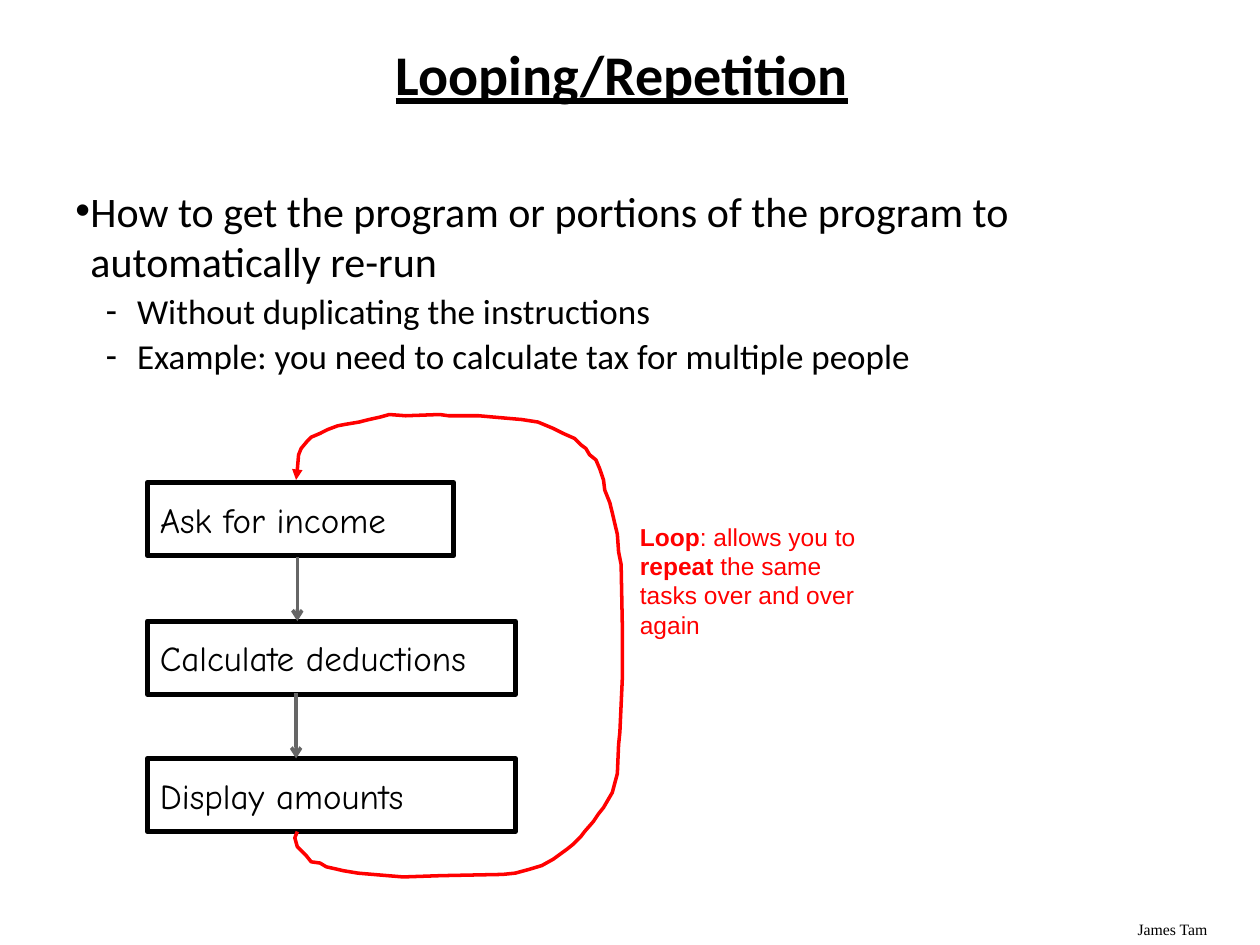
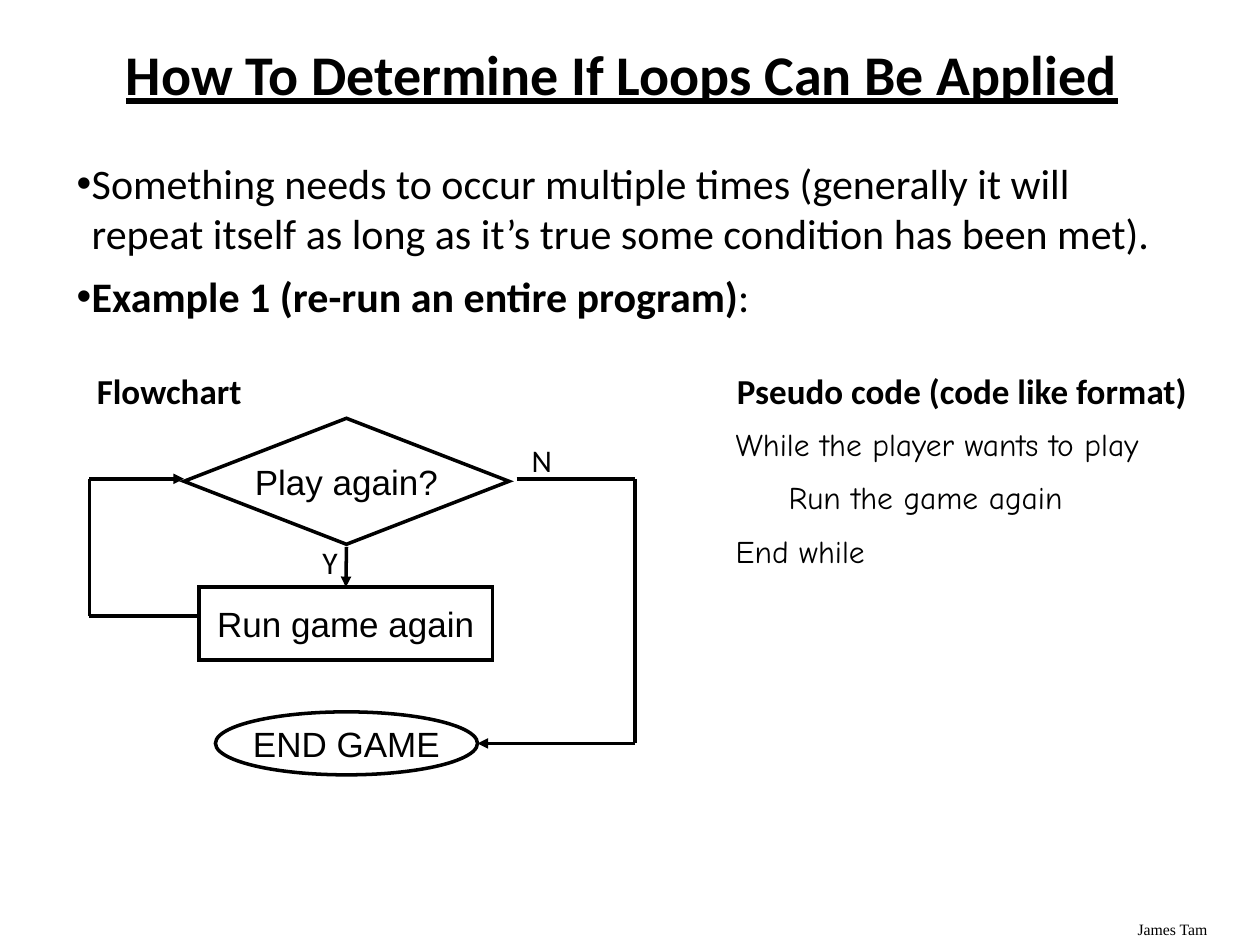
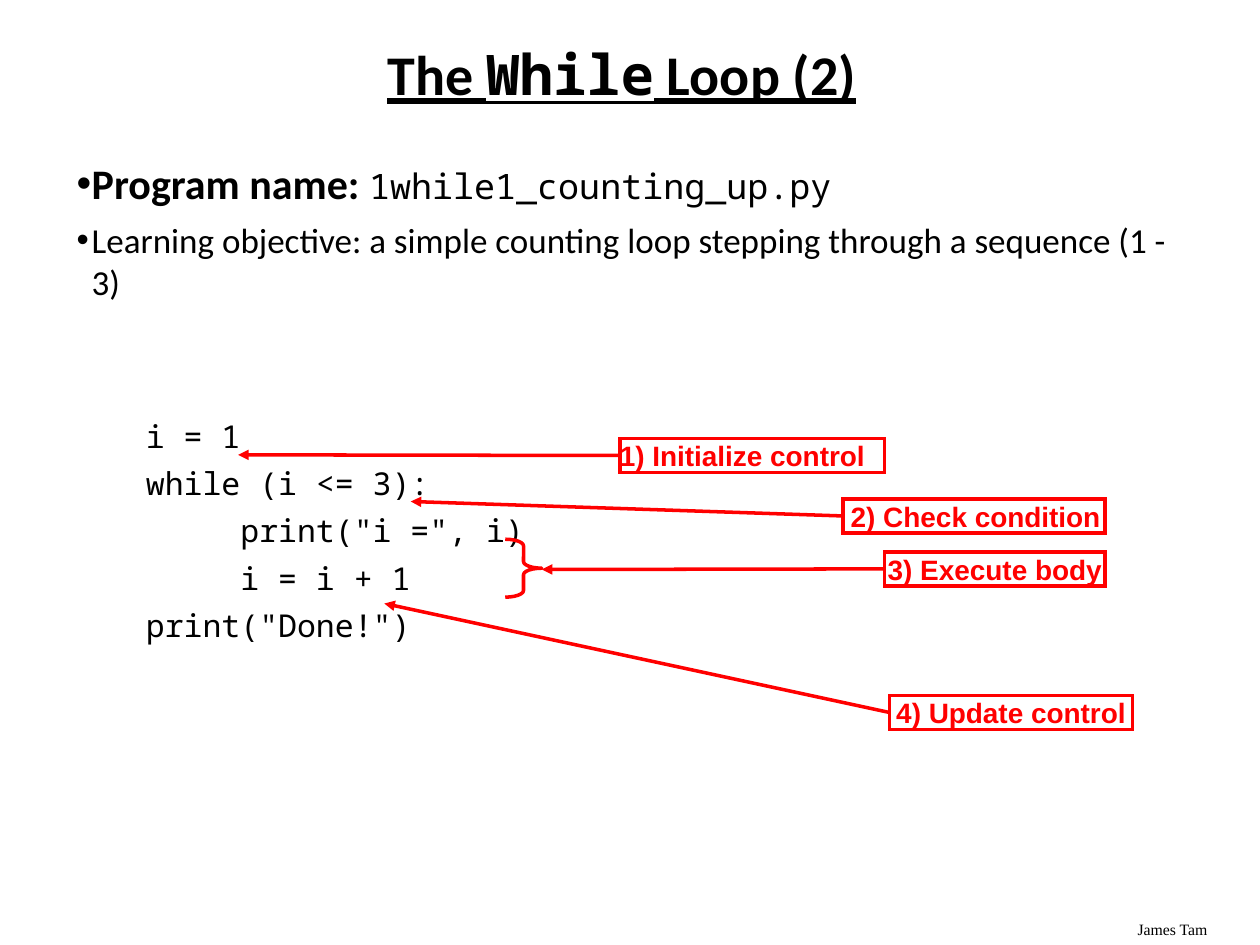
from lxml import etree
from pptx import Presentation
from pptx.dml.color import RGBColor
from pptx.enum.shapes import MSO_CONNECTOR, MSO_SHAPE
from pptx.enum.text import MSO_ANCHOR, PP_ALIGN
from pptx.oxml.ns import qn
from pptx.util import Inches, Pt

COLORS = {"black": "000000", "gray": "666666", "red": "FF0000"}
BODY, HAND, MONO, SANS = "Calibri", "Comic Neue", "Noto Sans Mono", "Arial"
CENTER = PP_ALIGN.CENTER
STRAIGHT = MSO_CONNECTOR.STRAIGHT


def write(sp, paragraphs, font, size, color="black", align=PP_ALIGN.LEFT,
          before=0, bold=False, underline=False, spacing=None):
    """Fill a shape; a paragraph is (runs, options), a run is (text, overrides)."""
    tf = sp.text_frame
    tf.word_wrap = True
    for i, (runs, options) in enumerate(paragraphs):
        p = tf.add_paragraph() if i else tf.paragraphs[0]
        p.alignment = align
        p.line_spacing = spacing
        p.space_before = Pt(options.get("before", before))
        pPr = p._p.get_or_add_pPr()
        pPr.set("marL", str(Inches(options.get("left", 0))))
        pPr.set("indent", str(Inches(-options.get("hang", 0))))
        if "bullet" in options:
            etree.SubElement(pPr, qn("a:buFont")).set("typeface", SANS)
            etree.SubElement(pPr, qn("a:buChar")).set("char", options["bullet"])
        for text, own in runs:
            r = p.add_run()
            r.text = text
            r.font.name = own.get("font", font)
            r.font.size = Pt(own.get("size", options.get("size", size)))
            r.font.bold = own.get("bold", bold)
            r.font.underline = underline
            r.font.color.rgb = RGBColor.from_string(COLORS[color])


def outline(sp, color="black", width=2, head=None, sharp=False):
    """Give a shape or connector a plain line, no shadow, and maybe an arrowhead."""
    if hasattr(sp, "fill"):
        sp.fill.background()
    sp.line.color.rgb = RGBColor.from_string(COLORS[color])
    sp.line.width = Pt(width)
    spPr = sp._element.spPr
    ln = spPr.find(qn("a:ln"))
    if sharp:
        etree.SubElement(ln, qn("a:miter")).set("lim", "800000")
    if head:
        etree.SubElement(ln, qn("a:tailEnd")).set("type", head)
    etree.SubElement(spPr, qn("a:effectLst"))


prs = Presentation()
prs.slide_width, prs.slide_height = Inches(10), Inches(7.5)

# Title, body and footer of every slide
B = {"bold": True}
BULLET = {"bullet": "•", "left": 0.12, "hang": 0.12, "before": 7.2}
SMALL_BULLET = dict(BULLET, before=6, size=20)
DASH = {"bullet": "-", "left": 0.49, "hang": 0.25, "before": 2, "size": 20}
pages = [
    ([("Looping/Repetition", {})], (0.5, 1.42, 9, 4.83), [
        ([("How to get the program or portions of the program to "
           "automatically re-run", {})], BULLET),
        ([("Without duplicating the instructions", {})], DASH),
        ([("Example: you need to calculate tax for multiple people", {})], DASH)]),
    ([("How To Determine If Loops Can Be Applied", {})], (0.51, 1.2, 8.94, 5.87), [
        ([("Something needs to occur multiple times (generally it will repeat "
           "itself as long as it’s true some condition has been met).", {})], BULLET),
        ([("Example 1 (re-run an entire program)", B), (":", {})], BULLET)]),
    ([("The ", {}), ("While", {"font": MONO}), (" Loop (2)", {})],
     (0.51, 1.2, 8.94, 5.87), [
        ([("Program name: ", B),
          ("1while1_counting_up.py", {"font": MONO, "size": 20})], BULLET),
        ([("Learning objective: a simple counting loop stepping through a "
           "sequence (1 - 3)", {})], SMALL_BULLET)]),
]
for title, body_box, body in pages:
    s = prs.slides.add_slide(prs.slide_layouts[6])
    sp = s.shapes.add_textbox(*map(Inches, (8.93, 7.25, 1, 0.25)))
    write(sp, [([("James Tam", {})], {})], "Times New Roman", 9)
    sp = s.shapes.add_textbox(*map(Inches, (0.47, 0.33, 8.93, 0.57)))
    sp.text_frame.vertical_anchor = MSO_ANCHOR.MIDDLE
    write(sp, [(title, {})], BODY, 32, align=CENTER, bold=True, underline=True,
          spacing=0.9)
    sp = s.shapes.add_textbox(*map(Inches, body_box))
    write(sp, body, BODY, 24)
looping, deciding, counting = prs.slides

# Slide 1: the three steps
for text, top, width in [("Ask for income", 3.83, 2.43),
                         ("Calculate deductions", 4.93, 2.92),
                         ("Display amounts", 6.02, 2.92)]:
    sp = looping.shapes.add_shape(MSO_SHAPE.RECTANGLE,
                                  *map(Inches, (1.17, top, width, 0.58)))
    outline(sp, width=3)
    write(sp, [([(text, {})], {})], HAND, 20)
for x, top, bottom in [(2.36, 4.42, 4.93), (2.35, 5.5, 6.02)]:
    arrow = looping.shapes.add_connector(STRAIGHT, *map(Inches, (x, top, x, bottom)))
    outline(arrow, "gray", head="arrow")

# Slide 1: hand-drawn loop, points in hundredths of an inch
loop_points = [
    (236, 660), (234, 665), (236, 672), (243, 679), (247, 684), (254, 685),
    (259, 688), (268, 690), (272, 691), (284, 693), (296, 694), (320, 696),
    (350, 695), (399, 694), (409, 693), (420, 690), (430, 687), (439, 682),
    (450, 674), (455, 670), (461, 664), (464, 660), (471, 652), (475, 646),
    (479, 641), (486, 629), (490, 614), (491, 591), (492, 581), (494, 537),
    (494, 500), (493, 448), (491, 438), (490, 424), (489, 420), (486, 407),
    (484, 399), (480, 389), (479, 381), (476, 372), (473, 365), (468, 361),
    (465, 356), (461, 353), (456, 348), (447, 344), (439, 340), (427, 335),
    (414, 333), (391, 331), (380, 330), (356, 330), (349, 329), (322, 330),
    (309, 329), (302, 331), (293, 333), (285, 335), (273, 337), (268, 338),
    (260, 341), (254, 344), (247, 347), (244, 350), (239, 356), (237, 361),
    (236, 373), (235, 381)]
builder = looping.shapes.build_freeform(*loop_points[0], scale=Inches(0.01))
builder.add_line_segments(loop_points[1:], close=False)
outline(builder.convert_to_shape(), "red", head="triangle")

sp = looping.shapes.add_textbox(*map(Inches, (4.98, 4.09, 1.92, 1.04)))
write(sp, [([("Loop", B), (": allows you to ", {}), ("repeat", B),
             (" the same tasks over and over again", {})], {})], SANS, 14, "red")

# Slide 2: flowchart nodes
nodes = []
for kind, text, box in [
        (MSO_SHAPE.DIAMOND, "Play again?", (1.46, 3.32, 2.58, 1)),
        (MSO_SHAPE.RECTANGLE, "Run game again", (1.58, 4.66, 2.33, 0.58)),
        (MSO_SHAPE.OVAL, "END GAME", (1.71, 5.65, 2.08, 0.5))]:
    sp = deciding.shapes.add_shape(kind, *map(Inches, box))
    outline(sp, sharp=True)
    write(sp, [([(text, {})], {})], SANS, 20, align=CENTER)
    sp.text_frame.word_wrap = False
    nodes.append(sp)
question, run_game, end_game = nodes

# Slide 2: flow lines
yes = deciding.shapes.add_connector(STRAIGHT, *map(Inches, (2.75, 4.34, 2.75, 4.66)))
yes.end_connect(run_game, 0)
outline(yes, head="triangle")
for route in [[(1.58, 4.89), (0.71, 4.89), (0.71, 3.8), (1.46, 3.8)],
              [(4.1, 3.8), (5.04, 3.8), (5.04, 5.9), (3.79, 5.9)]]:
    for start, end in zip(route, route[1:]):
        line = deciding.shapes.add_connector(STRAIGHT, *map(Inches, start + end))
        outline(line, head="triangle" if end == route[-1] else None)

# Slide 2: branch labels, headings and pseudo code
for text, box, size, bold in [
        ("Y", (2.46, 4.26, 0.34, 0.4), 18, False),
        ("N", (4.12, 3.45, 0.58, 0.4), 18, False),
        ("Flowchart", (0.67, 2.88, 4.52, 0.44), 20, True),
        ("Pseudo code (code like format)", (5.75, 2.88, 3.93, 0.44), 20, True)]:
    sp = deciding.shapes.add_textbox(*map(Inches, box))
    write(sp, [([(text, {})], {})], BODY, size, bold=bold)
sp = deciding.shapes.add_textbox(*map(Inches, (5.74, 3.32, 4.35, 1.31)))
write(sp, [([("While the player wants to play", {})], {}),
           ([("Run the game again", {})], {"left": 0.42}),
           ([("End while", {})], {})], HAND, 18, before=9)

# Slide 3: program
LOOP_BODY = {"left": 0.75}
sp = counting.shapes.add_textbox(*map(Inches, (1.06, 3.26, 4, 2)))
write(sp, [([("i = 1", {})], {}),
           ([("while (i <= 3):", {})], {}),
           ([('print("i =", i)', {})], LOOP_BODY),
           ([("i = i + 1", {})], LOOP_BODY),
           ([('print("Done!")', {})], {})], MONO, 18, before=5.4)
brace = counting.shapes.add_shape(MSO_SHAPE.RIGHT_BRACE,
                                  *map(Inches, (4.01, 4.28, 0.29, 0.46)))
brace.adjustments[0] = 0.18
outline(brace, "red")

# Slide 3: labels, each with an arrow to its part of the program
for text, left, top, width, align, target in [
        ("1) Initialize control", 4.92, 3.48, 2.1, PP_ALIGN.LEFT, (1.89, 3.61)),
        (" 2) Check condition", 6.69, 3.96, 2.08, PP_ALIGN.LEFT, (3.26, 3.98)),
        ("3) Execute body", 7.02, 4.38, 1.75, CENTER, (4.3, 4.52)),
        ("4) Update control", 7.06, 5.52, 1.93, CENTER, (3.05, 4.79))]:
    label = counting.shapes.add_shape(MSO_SHAPE.RECTANGLE,
                                      *map(Inches, (left, top, width, 0.27)))
    outline(label, "red", sharp=True)
    tf = label.text_frame
    tf.margin_left = tf.margin_right = tf.margin_top = tf.margin_bottom = 0
    write(label, [([(text, {})], {})], SANS, 16, "red", align, bold=True)
    arrow = counting.shapes.add_connector(STRAIGHT, *map(Inches, (left, top) + target))
    arrow.begin_connect(label, 1)
    outline(arrow, "red", head="triangle")

prs.save("out.pptx")
